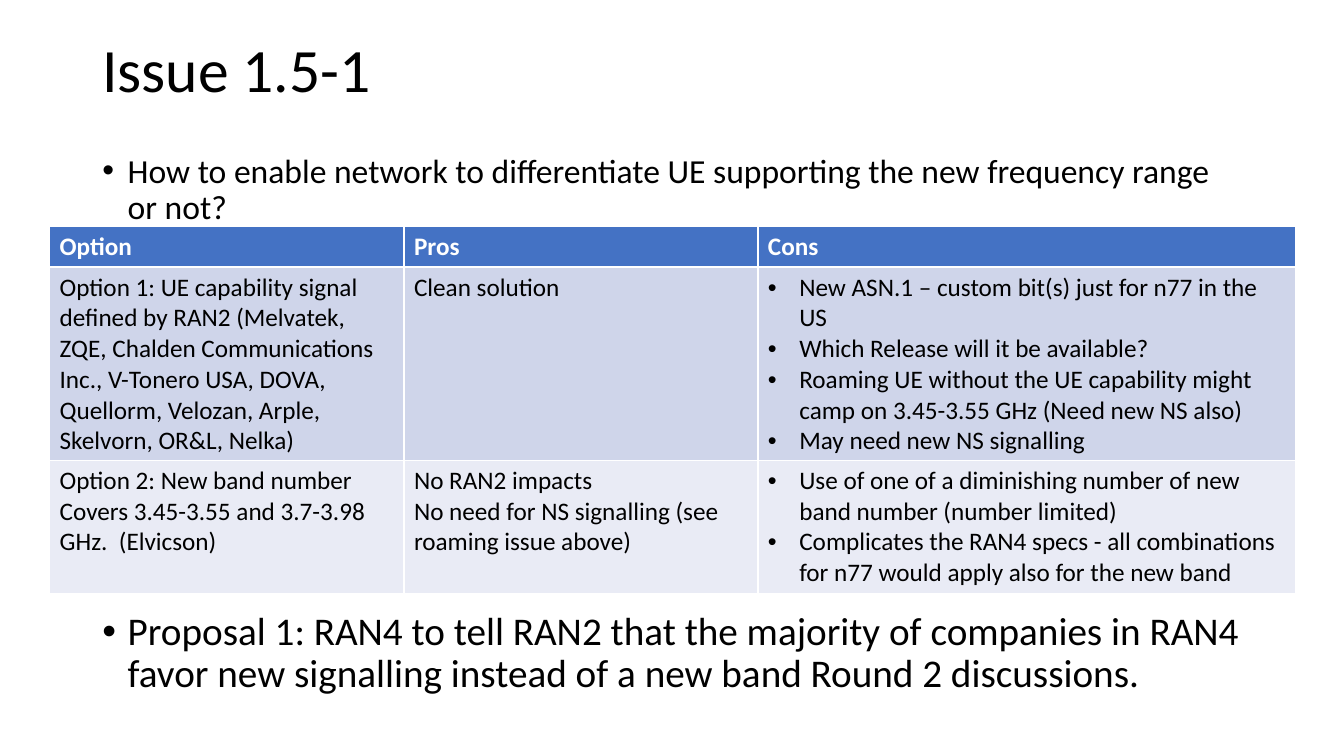
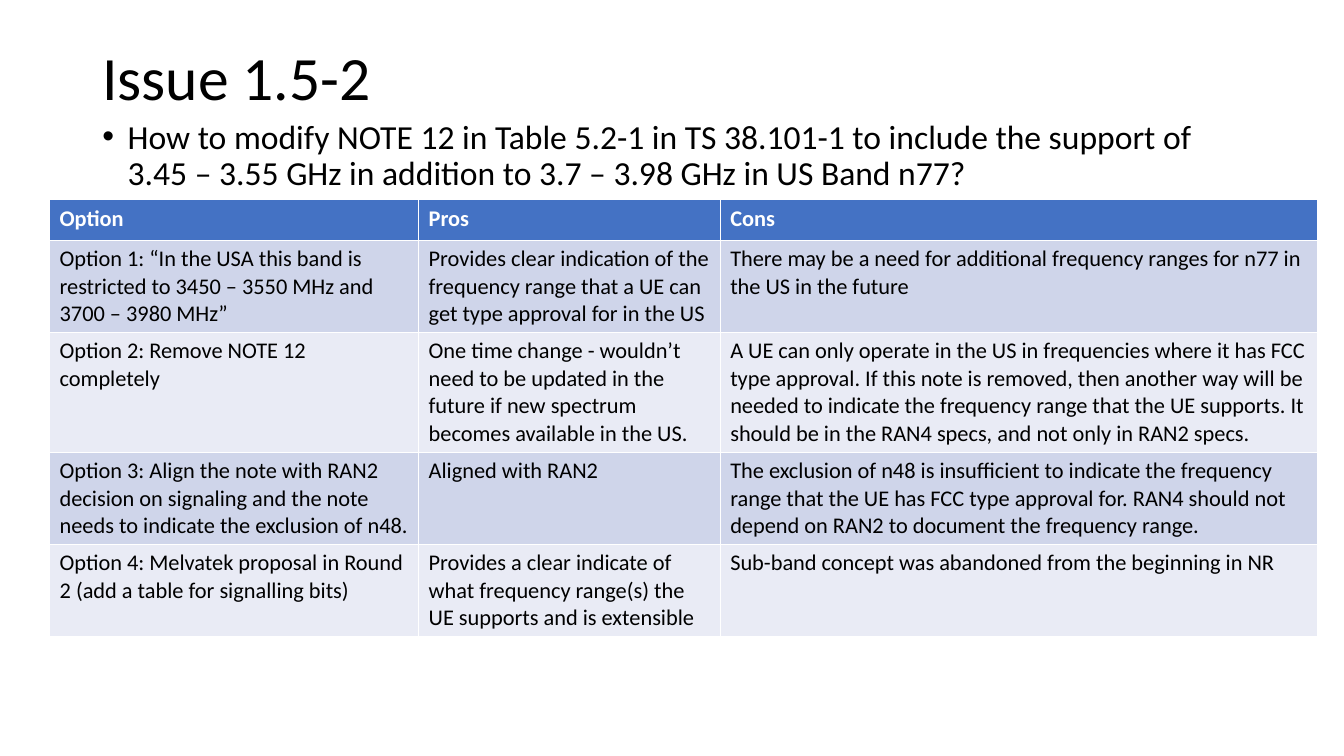
from lxml import etree
from pptx import Presentation
from pptx.dml.color import RGBColor
from pptx.enum import text as tx
from pptx.oxml import ns
from pptx.util import Cm, Pt

FONT = "Calibri"
BLACK = RGBColor(0x00, 0x00, 0x00)
WHITE = RGBColor(0xFF, 0xFF, 0xFF)
BLUE = RGBColor(0x44, 0x72, 0xC4)
BANDS = [RGBColor(0xCF, 0xD5, 0xEA), RGBColor(0xE9, 0xEB, 0xF5)]

LEFT, WIDTH = 2.33, 29.21
TITLE_H = 3.68
GRID_X = 1.25
HEAD_H = 1.03
HEAD = ("Option", "Pros", "Cons")

ISSUES = [
    {
        "title": ("Issue 1.5-1", 0),
        "points": [
            ("How to enable network to differentiate UE supporting the new "
             "frequency range or not?", 3.76, 2.59, 24),
            ("Proposal 1: RAN4 to tell RAN2 that the majority of companies in RAN4 "
             "favor new signalling instead of a new band Round 2 discussions.",
             15.29, 2.59, 28),
        ],
        "top": 5.7,
        "size": 18,
        "cols": (8.93, 8.92, 13.55),
        "heights": (4.87, 3.35),
        "listed": True,
        "rows": [
            ("Option 1: UE capability signal defined by RAN2 (Melvatek, ZQE, "
             "Chalden Communications Inc., V-Tonero USA, DOVA, Quellorm, "
             "Velozan, Arple, Skelvorn, OR&L, Nelka)",
             "Clean solution",
             "New ASN.1 – custom bit(s) just for n77 in the US\n"
             "Which Release will it be available?\n"
             "Roaming UE without the UE capability might camp on 3.45-3.55 GHz "
             "(Need new NS also)\n"
             "May need new NS signalling"),
            ("Option 2: New band number Covers 3.45-3.55 and 3.7-3.98 GHz.  (Elvicson)",
             "No RAN2 impacts\n"
             "No need for NS signalling (see roaming issue above)",
             "Use of one of a diminishing number of new band number (number limited)\n"
             "Complicates the RAN4 specs - all combinations for n77 would apply "
             "also for the new band"),
        ],
    },
    {
        "title": ("Issue 1.5-2", 0.2),
        "points": [
            ("How to modify NOTE 12 in Table 5.2-1 in TS 38.101-1 to include the "
             "support of 3.45 – 3.55 GHz in addition to 3.7 – 3.98 GHz in US Band n77?",
             2.9, 3.68, 24),
        ],
        "top": 5.03,
        "size": 16,
        "cols": (9.3, 7.6, 15.05),
        "heights": (2.32, 3.02, 2.32, 2.32),
        "listed": False,
        "rows": [
            ("Option 1: “In the USA this band is restricted to 3450 – 3550 MHz "
             "and 3700 – 3980 MHz”",
             "Provides clear indication of the frequency range that a UE can get "
             "type approval for in the US",
             "There may be a need for additional frequency ranges for n77 in the "
             "US in the future"),
            ("Option 2: Remove NOTE 12 completely",
             "One time change - wouldn’t need to be updated in the future if new "
             "spectrum becomes available in the US.",
             "A UE can only operate in the US in frequencies where it has FCC type "
             "approval. If this note is removed, then another way will be needed to "
             "indicate the frequency range that the UE supports. It should be in the "
             "RAN4 specs, and not only in RAN2 specs."),
            ("Option 3: Align the note with RAN2 decision on signaling and the note "
             "needs to indicate the exclusion of n48.",
             "Aligned with RAN2",
             "The exclusion of n48 is insufficient to indicate the frequency range "
             "that the UE has FCC type approval for. RAN4 should not depend on RAN2 "
             "to document the frequency range."),
            ("Option 4: Melvatek proposal in Round 2 (add a table for signalling bits)",
             "Provides a clear indicate of what frequency range(s) the UE supports "
             "and is extensible",
             "Sub-band concept was abandoned from the beginning in NR"),
        ],
    },
]


def style(para, size, color=BLACK, bold=False):
    for run in para.runs:
        font = run.font
        font.name, font.size, font.bold = FONT, Pt(size), bold
        font.color.rgb = color


def bullet(para, indent):
    props = para._p.get_or_add_pPr()
    props.set("marL", str(Cm(indent)))
    props.set("indent", str(-Cm(indent)))
    face = etree.SubElement(props, ns.qn("a:buFont"))
    face.set("typeface", "Arial")
    mark = etree.SubElement(props, ns.qn("a:buChar"))
    mark.set("char", "•")


def add_text(slide, words, top, height, size):
    box = slide.shapes.add_textbox(Cm(LEFT), Cm(top), Cm(WIDTH), Cm(height))
    frame = box.text_frame
    frame.word_wrap = True
    frame.text = words
    para = frame.paragraphs[0]
    para.line_spacing = 0.9
    style(para, size)
    return frame


def add_title(slide, words, top):
    frame = add_text(slide, words, top, TITLE_H, 44)
    frame.vertical_anchor = tx.MSO_ANCHOR.MIDDLE


def add_point(slide, words, top, height, size):
    para = add_text(slide, words, top, height, size).paragraphs[0]
    para.space_before = Pt(10)
    bullet(para, 0.64)


def add_grid(slide, issue):
    rows = [HEAD] + issue["rows"]
    cols = issue["cols"]
    heights = (HEAD_H,) + issue["heights"]
    grid = slide.shapes.add_table(
        len(rows), len(cols), Cm(GRID_X), Cm(issue["top"]),
        Cm(sum(cols)), Cm(sum(heights))).table
    for col, width in zip(grid.columns, cols):
        col.width = Cm(width)
    for r, (row, height) in enumerate(zip(rows, heights)):
        grid.rows[r].height = Cm(height)
        head = r == 0
        for c, words in enumerate(row):
            cell = grid.cell(r, c)
            cell.text_frame.text = words
            cell.fill.solid()
            cell.fill.fore_color.rgb = BLUE if head else BANDS[(r - 1) % 2]
            for para in cell.text_frame.paragraphs:
                style(para, issue["size"], WHITE if head else BLACK, head)
                if issue["listed"] and not head and c == 2:
                    bullet(para, 0.79)


def main():
    deck = Presentation()
    deck.slide_width, deck.slide_height = Cm(33.87), Cm(19.05)
    for issue in ISSUES:
        slide = deck.slides.add_slide(deck.slide_layouts[6])
        add_title(slide, *issue["title"])
        for point in issue["points"]:
            add_point(slide, *point)
        add_grid(slide, issue)
    deck.save("out.pptx")


if __name__ == "__main__":
    main()
